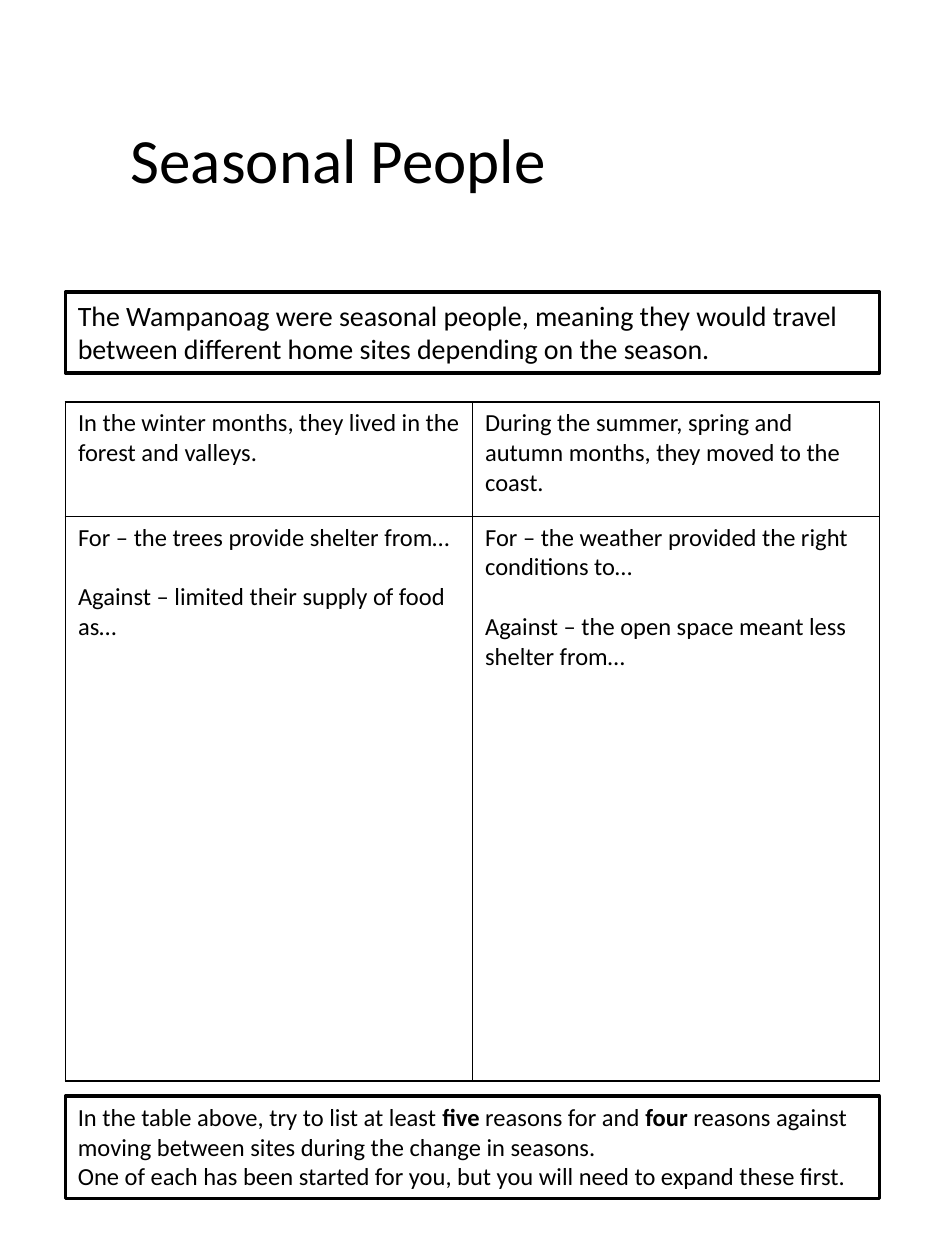
"""Build the Seasonal People worksheet."""
import pptx
import pptx.util
import pptx.dml.color
import pptx.enum.shapes
import pptx.enum.text
import pptx.oxml
import pptx.oxml.ns
from pptx.util import Cm, Pt

COLORS = {"ink": "000000", "paper": "FFFFFF"}
FONT = "Calibri"
LEFT, WIDTH = 1.32, 16.41

TITLE = "Seasonal People"
INTRO = [[("The Wampanoag were seasonal people, meaning they would travel "
           "between different home sites depending on the season.", False)]]
TASK = [
    [("In the table above, try to list at least ", False), ("five ", True),
     ("reasons for and ", False), ("four", True),
     (" reasons against moving between sites during the change in seasons.", False)],
    [("One of each has been started for you, but you will need to expand these first.", False)],
]
BOXES = [(INTRO, 5.89, 1.63, 16), (TASK, 22.1, 2.06, 14)]
TABLE = [
    [["In the winter months, they lived in the forest and valleys."],
     ["During the summer, spring and autumn months, they moved to the coast."]],
    [["For – the trees provide shelter from…",
      "Against – limited their supply of food as…"],
     ["For – the weather provided the right conditions to…",
      "Against – the open space meant less shelter from…"]],
]
TABLE_TOP, ROW_HEIGHTS = 8.1, [2.31, 11.38]


def rgb(name):
    return pptx.dml.color.RGBColor.from_string(COLORS[name])


def write(tf, paragraphs, size, align=pptx.enum.text.PP_ALIGN.LEFT, gap=0):
    tf.word_wrap = True
    for i, runs in enumerate(paragraphs):
        p = tf.add_paragraph() if i else tf.paragraphs[0]
        p.alignment = align
        if i and gap:
            p.space_before = Pt(gap)
        for text, bold in runs:
            r = p.add_run()
            r.text = text
            r.font.name, r.font.size, r.font.bold = FONT, Pt(size), bold
            r.font.color.rgb = rgb("ink")


def add_title(s):
    tf = s.shapes.add_textbox(Cm(LEFT), Cm(1.9), Cm(11), Cm(2.6)).text_frame
    tf.vertical_anchor = pptx.enum.text.MSO_ANCHOR.MIDDLE
    write(tf, [[(TITLE, False)]], 36, pptx.enum.text.PP_ALIGN.CENTER)


def add_box(s, paragraphs, top, height, size):
    sp = s.shapes.add_shape(pptx.enum.shapes.MSO_SHAPE.RECTANGLE,
                            Cm(LEFT), Cm(top), Cm(WIDTH), Cm(height))
    sp.shadow.inherit = False
    sp.fill.solid()
    sp.fill.fore_color.rgb = rgb("paper")
    sp.line.color.rgb = rgb("ink")
    sp.line.width = Pt(2)
    sp.text_frame.vertical_anchor = pptx.enum.text.MSO_ANCHOR.TOP
    write(sp.text_frame, paragraphs, size)


def add_borders(cell):
    tc_pr = cell._tc.get_or_add_tcPr()
    for i, side in enumerate(("lnL", "lnR", "lnT", "lnB")):
        tc_pr.insert(i, pptx.oxml.parse_xml(
            f'<a:{side} {pptx.oxml.ns.nsdecls("a")} w="{Pt(1)}"><a:solidFill>'
            f'<a:srgbClr val="{COLORS["ink"]}"/></a:solidFill></a:{side}>'))


def add_reasons_table(s):
    rows, cols = len(TABLE), len(TABLE[0])
    table = s.shapes.add_table(rows, cols, Cm(LEFT), Cm(TABLE_TOP),
                               Cm(WIDTH), Cm(sum(ROW_HEIGHTS))).table
    table.first_row = table.horz_banding = False
    for row, height in zip(table.rows, ROW_HEIGHTS):
        row.height = Cm(height)
    for i, row in enumerate(TABLE):
        for j, lines in enumerate(row):
            cell = table.cell(i, j)
            cell.fill.background()
            add_borders(cell)
            write(cell.text_frame, [[(line, False)] for line in lines], 14, gap=17)


def main():
    prs = pptx.Presentation()
    prs.slide_width, prs.slide_height = Cm(19.05), Cm(25.4)
    s = prs.slides.add_slide(prs.slide_layouts[6])
    add_title(s)
    add_reasons_table(s)
    for box in BOXES:
        add_box(s, *box)
    prs.save("out.pptx")


if __name__ == "__main__":
    main()
